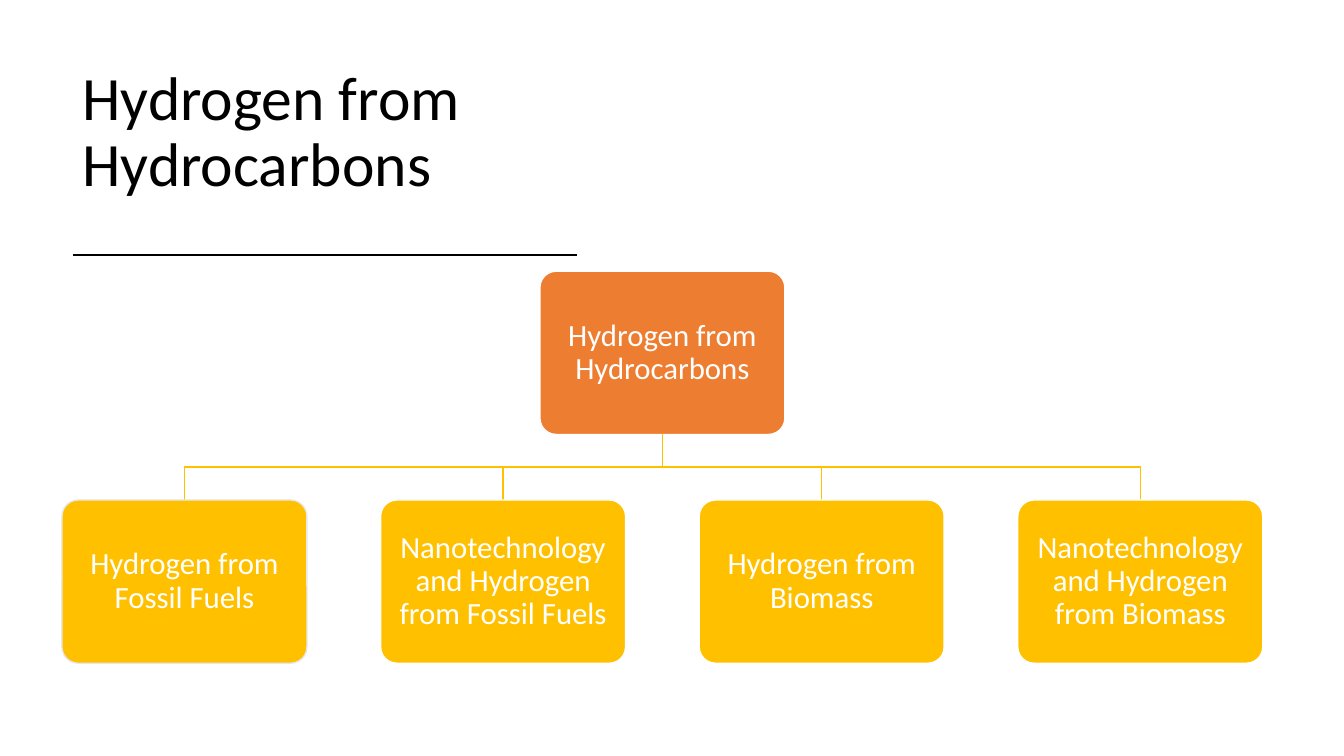
from pptx import Presentation
from pptx.dml.color import RGBColor
from pptx.enum.shapes import MSO_CONNECTOR, MSO_SHAPE
from pptx.enum.text import MSO_ANCHOR, PP_ALIGN
from pptx.util import Inches, Pt
from lxml.etree import SubElement
from pptx.oxml.ns import qn

TITLE = "Hydrogen from Hydrocarbons"
ROOT = ("Hydrogen from Hydrocarbons", "ED7D31", "FFFFFF")
LEAVES = [
    ("Hydrogen from Fossil Fuels", "FFC000", "E7E7E7"),
    ("Nanotechnology and Hydrogen from Fossil Fuels", "FFC000", "FFFFFF"),
    ("Hydrogen from Biomass", "FFC000", "FFFFFF"),
    ("Nanotechnology and Hydrogen from Biomass", "FFC000", "FFFFFF"),
]
FONT = "Calibri"
MID, STEP = 6.57, 3.16
WIDE, HIGH = 2.43, 1.62
TOP, LOW = 2.69, 4.96


def color(code):
    return RGBColor.from_string(code)


def write(frame, text, size, code):
    frame.word_wrap = True
    frame.vertical_anchor = MSO_ANCHOR.MIDDLE
    para = frame.paragraphs[0]
    para.text = text
    para.line_spacing = 0.9
    para.font.name = FONT
    para.font.size = Pt(size)
    para.font.color.rgb = color(code)
    return para


def add_box(shapes, mid, top, node):
    text, fill, edge = node
    box = shapes.add_shape(MSO_SHAPE.ROUNDED_RECTANGLE, Inches(mid - WIDE / 2),
                           Inches(top), Inches(WIDE), Inches(HIGH))
    box.adjustments[0] = 0.1
    box.shadow.inherit = False
    box.fill.solid()
    box.fill.fore_color.rgb = color(fill)
    box.line.color.rgb = color(edge)
    box.line.width = Pt(1)
    frame = box.text_frame
    frame.margin_left = frame.margin_right = Inches(0.09)
    frame.margin_top = frame.margin_bottom = Inches(0.09)
    write(frame, text, 22, "FFFFFF").alignment = PP_ALIGN.CENTER


def add_branch(shapes, mid):
    start = TOP + HIGH
    bend = (start + LOW) / 2
    pen = shapes.build_freeform(Inches(MID), Inches(start))
    pen.add_line_segments([(Inches(x), Inches(y)) for x, y in
                           [(MID, bend), (mid, bend), (mid, LOW)]], close=False)
    branch = pen.convert_to_shape()
    branch.shadow.inherit = False
    branch.fill.background()
    branch.line.color.rgb = color("FFC000")
    branch.line.width = Pt(1)


def main():
    deck = Presentation()
    deck.slide_width, deck.slide_height = Inches(13.33), Inches(7.5)
    shapes = deck.slides.add_slide(deck.slide_layouts[6]).shapes

    title = shapes.add_textbox(Inches(0.72), Inches(0.4), Inches(5.6), Inches(1.85))
    write(title.text_frame, TITLE, 44, "000000")

    rule = shapes.add_connector(MSO_CONNECTOR.STRAIGHT, Inches(0.72), Inches(2.53),
                                Inches(5.72), Inches(2.53))
    rule.line.color.rgb = color("000000")
    rule.line.width = Pt(1.5)
    SubElement(rule._element.spPr, qn("a:effectLst"))

    add_box(shapes, MID, TOP, ROOT)
    for i, leaf in enumerate(LEAVES):
        mid = MID + (i - (len(LEAVES) - 1) / 2) * STEP
        add_branch(shapes, mid)
        add_box(shapes, mid, LOW, leaf)

    deck.save("out.pptx")


if __name__ == "__main__":
    main()
